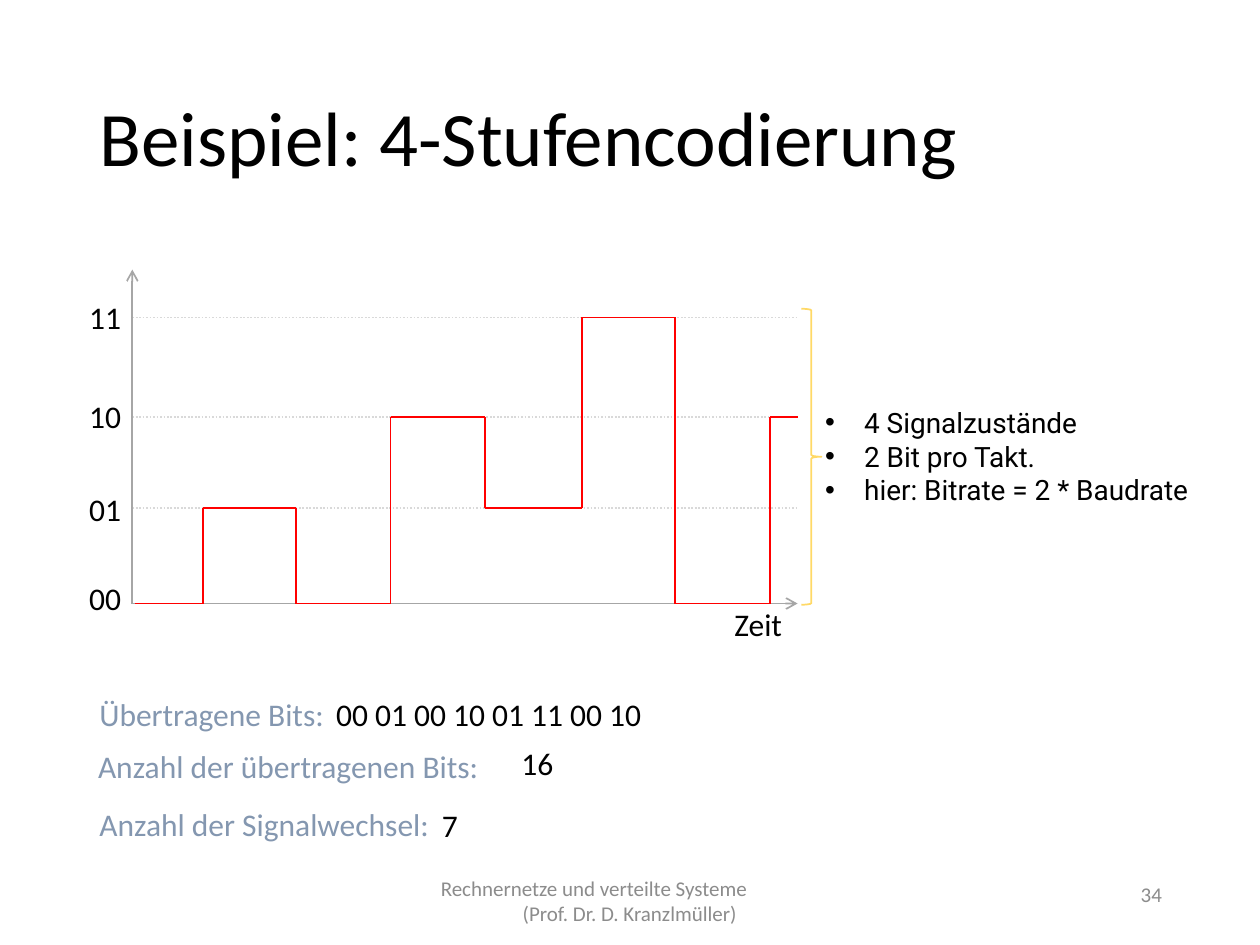
from dataclasses import dataclass
from itertools import pairwise

from lxml.etree import SubElement
from pptx import Presentation
from pptx.dml.color import RGBColor
from pptx.enum.dml import MSO_LINE
from pptx.enum.shapes import MSO_CONNECTOR, MSO_SHAPE
from pptx.enum.text import MSO_ANCHOR, MSO_AUTO_SIZE, PP_ALIGN
from pptx.oxml.ns import qn
from pptx.util import Inches, Pt


@dataclass(frozen=True)
class Theme:
    font: str = "Calibri"
    note_font: str = "Roboto"
    ink: str = "000000"
    caption: str = "8497B0"
    muted: str = "8C8C8C"
    grid: str = "D9D9D9"
    axis: str = "A6A6A6"
    signal: str = "FF0000"
    brace: str = "FFD966"
    title_size: int = 44
    label_size: int = 18
    note_size: int = 16
    footer_size: int = 12
    stroke: int = 1


class SlideBuilder:
    def __init__(self, slide, theme):
        self.slide = slide
        self.theme = theme

    def add_run(self, paragraph, words, size, color, font):
        run = paragraph.add_run()
        run.text = words
        run.font.size = Pt(size)
        run.font.name = font
        run.font.color.rgb = RGBColor.from_string(color)

    def title(self, words, left, top, width, height):
        heading = self.slide.shapes.title
        heading.left, heading.top = Inches(left), Inches(top)
        heading.width, heading.height = Inches(width), Inches(height)
        frame = heading.text_frame
        frame.vertical_anchor = MSO_ANCHOR.MIDDLE
        paragraph = frame.paragraphs[0]
        paragraph.alignment = PP_ALIGN.LEFT
        paragraph.line_spacing = 0.9
        self.add_run(paragraph, words, self.theme.title_size, self.theme.ink, self.theme.font)

    def text(self, lines, left, top, width, height=0.4, size=None, color=None,
             font=None, align=PP_ALIGN.LEFT, wrap=True, grow=True, bullets=False):
        box = self.slide.shapes.add_textbox(
            Inches(left), Inches(top), Inches(width), Inches(height))
        frame = box.text_frame
        frame.word_wrap = wrap
        frame.auto_size = MSO_AUTO_SIZE.SHAPE_TO_FIT_TEXT if grow else MSO_AUTO_SIZE.NONE
        for index, words in enumerate(lines):
            paragraph = frame.add_paragraph() if index else frame.paragraphs[0]
            paragraph.alignment = align
            if bullets:
                self.bullet(paragraph)
            self.add_run(paragraph, words, size or self.theme.label_size,
                         color or self.theme.ink, font or self.theme.font)
        return frame

    def bullet(self, paragraph):
        properties = paragraph._p.get_or_add_pPr()
        self.indent(paragraph, 0.31, -0.31)
        SubElement(properties, qn("a:buFont"), typeface="Arial")
        SubElement(properties, qn("a:buChar"), char="•")

    def indent(self, paragraph, margin, first_line=0):
        properties = paragraph._p.get_or_add_pPr()
        properties.set("marL", str(Inches(margin)))
        properties.set("indent", str(Inches(first_line)))

    def line(self, start, end, color, dotted=False, arrow=False):
        connector = self.slide.shapes.add_connector(
            MSO_CONNECTOR.STRAIGHT, *(Inches(value) for value in (*start, *end)))
        connector.line.color.rgb = RGBColor.from_string(color)
        connector.line.width = Pt(self.theme.stroke)
        if dotted:
            connector.line.dash_style = MSO_LINE.ROUND_DOT
        if arrow:
            SubElement(connector.line._get_or_add_ln(), qn("a:tailEnd"), type="arrow")
        SubElement(connector._element.spPr, qn("a:effectLst"))

    def right_brace(self, left, top, width, height):
        brace = self.slide.shapes.add_shape(
            MSO_SHAPE.RIGHT_BRACE, Inches(left), Inches(top), Inches(width), Inches(height))
        brace.shadow.inherit = False
        brace.fill.background()
        brace.line.color.rgb = RGBColor.from_string(self.theme.brace)
        brace.line.width = Pt(self.theme.stroke)

    def step_signal(self, symbols, edges, levels):
        names = list(levels)
        for symbol, (start, end) in zip(symbols, pairwise(edges)):
            self.line((start, levels[symbol]), (end, levels[symbol]), self.theme.signal)
        for edge, (before, after) in zip(edges[1:], pairwise(symbols)):
            low, high = sorted((names.index(before), names.index(after)))
            for lower, upper in pairwise(names[low:high + 1]):
                self.line((edge, levels[lower]), (edge, levels[upper]), self.theme.signal)


def main():
    presentation = Presentation()
    presentation.slide_width, presentation.slide_height = Inches(10), Inches(7.5)
    theme = Theme()
    builder = SlideBuilder(presentation.slides.add_slide(presentation.slide_layouts[5]), theme)

    builder.title("Beispiel: 4-Stufencodierung", 0.69, 0.4, 8.62, 1.45)

    levels = {"00": 4.79, "01": 4.03, "10": 3.31, "11": 2.52}
    label_tops = (4.55, 3.84, 3.1, 2.32)
    symbols = "00 01 00 10 01 11 00 10".split()
    edges = (1.07, 1.61, 2.35, 3.1, 3.85, 4.62, 5.36, 6.11, 6.33)
    axis_left, axis_right, base = 1.05, 6.33, levels["00"]

    for height in list(levels.values())[1:]:
        builder.line((axis_left, height), (axis_right, height), theme.grid, dotted=True)
    builder.line((axis_left, base), (axis_left, 2.14), theme.axis, arrow=True)
    builder.line((axis_left, base), (axis_right, base), theme.axis, arrow=True)
    for level, top in zip(levels, label_tops):
        builder.text([level], 0.61, top, 0.53)
    builder.text(["Zeit"], 5.73, 4.75, 0.59, wrap=False)
    builder.step_signal(symbols, edges, levels)

    builder.right_brace(6.36, 2.45, 0.16, 2.35)
    builder.text(["4 Signalzustände", "2 Bit pro Takt.", "hier: Bitrate = 2 * Baudrate"],
                 6.45, 3.17, 3.89, 0.91, size=theme.note_size, font=theme.note_font, bullets=True)

    facts = (
        ("Übertragene Bits:", 0.69, 5.47, 2.01, " ".join(symbols), 2.57, 5.47, 2.65),
        ("Anzahl der übertragenen Bits:", 0.68, 5.88, 3.26, "16", 4.04, 5.86, 0.46),
        ("Anzahl der Signalwechsel:", 0.69, 6.34, 2.85, "7", 3.41, 6.35, 0.33),
    )
    for caption, left, top, width, answer, answer_left, answer_top, answer_width in facts:
        builder.text([caption], left, top, width, color=theme.caption, wrap=False)
        builder.text([answer], answer_left, answer_top, answer_width, wrap=False)

    footer = builder.text(["Rechnernetze und verteilte Systeme", "(Prof. Dr. D. Kranzlmüller)"],
                          3.31, 6.95, 3.38, size=theme.footer_size, color=theme.muted, grow=False)
    footer.vertical_anchor = MSO_ANCHOR.MIDDLE
    for paragraph, margin in zip(footer.paragraphs, (0.09, 0.74)):
        builder.indent(paragraph, margin)
    builder.text(["34"], 8.34, 6.95, 0.98, 0.3, size=theme.footer_size,
                 color=theme.muted, align=PP_ALIGN.RIGHT)

    presentation.save("out.pptx")


if __name__ == "__main__":
    main()
